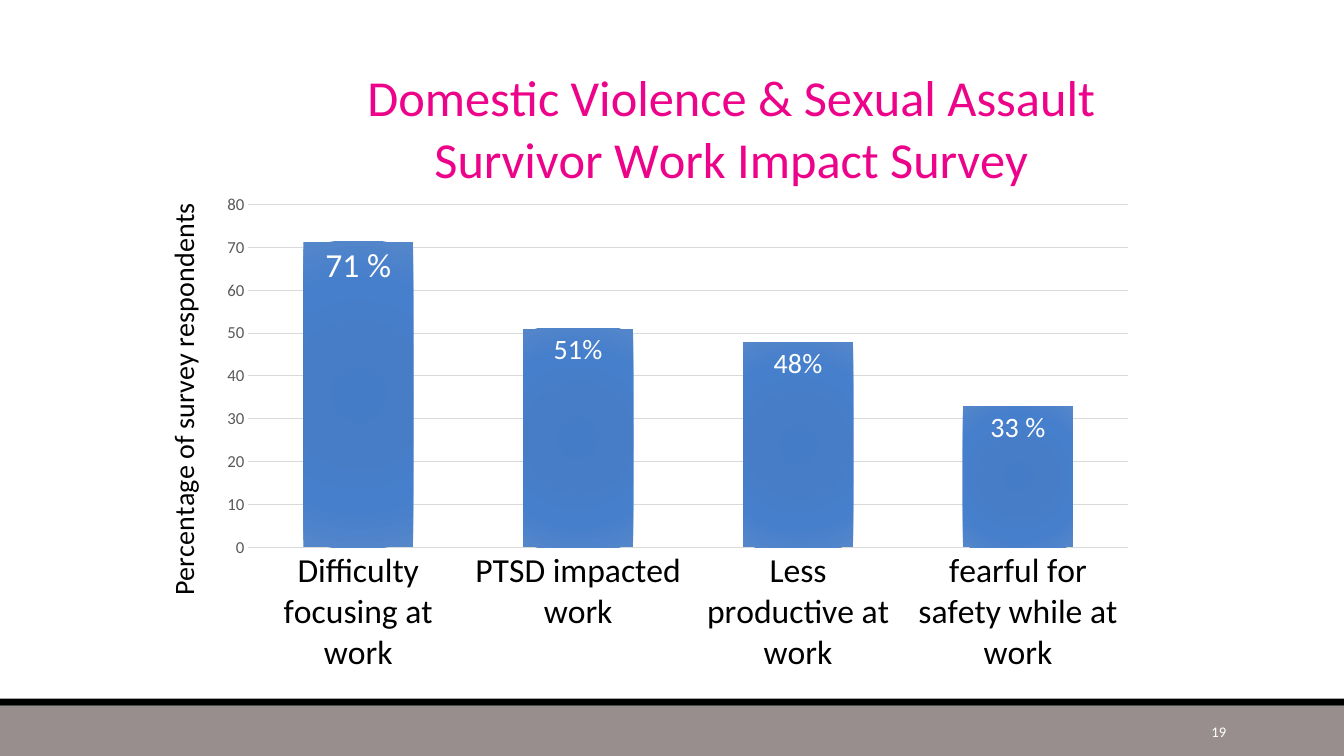
from pptx import Presentation
from pptx.chart.data import CategoryChartData
from pptx.dml.color import RGBColor
from pptx.enum.chart import XL_CHART_TYPE as ChartType
from pptx.enum.chart import XL_LABEL_POSITION as LabelPosition
from pptx.enum.chart import XL_TICK_MARK as TickMark
from pptx.enum.shapes import MSO_SHAPE as Shape
from pptx.enum.text import MSO_ANCHOR as Anchor
from pptx.enum.text import PP_ALIGN as Align
from pptx.oxml import parse_xml
from pptx.oxml.ns import nsdecls, qn
from pptx.util import Pt

FONT = "Calibri"
BLACK = RGBColor(0, 0, 0)
WHITE = RGBColor(0xFF, 0xFF, 0xFF)
PINK = RGBColor(0xED, 0x03, 0x8A)
TAUPE = RGBColor(0x99, 0x8E, 0x8E)
GRID = RGBColor(0xD9, 0xD9, 0xD9)
GREY = RGBColor(0x59, 0x59, 0x59)
LABEL_GREY = RGBColor(0x40, 0x40, 0x40)
BAR_STOPS = [
    (0, RGBColor(0x44, 0x7C, 0xC7)),
    (34, RGBColor(0x47, 0x7D, 0xC6)),
    (70, RGBColor(0x46, 0x7F, 0xCC)),
    (100, RGBColor(0x54, 0x86, 0xCA)),
]

TITLE = "Domestic Violence & Sexual Assault Survivor Work Impact Survey"
AXIS_TITLE = "Percentage of survey respondents"
PAGE_NUMBER = "19"
# category, value, label, label size
RESPONSES = [
    ("Difficulty focusing at work", 71.28, "71 %", 24),
    ("PTSD impacted work", 51.06, "51%", 20),
    ("Less productive at work", 47.87, "48%", 20),
    ("fearful for safety while at work", 32.98, "33 %", 20),
]

PAGE_WIDTH, PAGE_HEIGHT = 960, 540
# top, height, colour
FOOTER_BANDS = [(504, 36, TAUPE), (499, 5, BLACK)]
CHART_BOX = (106, 19, 714, 471)
NUMBER_BOX = (780, 508, 103, 29)
# fractions of the chart's width and height
TITLE_SPOT = {"x": 0.21, "y": 0.04}
AXIS_TITLE_SPOT = {"x": 0.01, "y": 0.26}
PLOT_SPOT = {"x": 0.1, "y": 0.27, "w": 0.88, "h": 0.52}


def style(font, size, color):
    font.name, font.size, font.bold = FONT, Pt(size), False
    font.color.rgb = color


def write(frame, text, size, color):
    frame.text = text
    style(frame.paragraphs[0].runs[0].font, size, color)


def set_layout(element, index, spot):
    """Fix a chart part's position, with its layout as child number index."""
    for old in element.findall(qn("c:layout")):
        element.remove(old)
    target = '<c:layoutTarget val="inner"/>' if "w" in spot else ""
    modes = "".join(f'<c:{key}Mode val="edge"/>' for key in "xy")
    values = "".join(f'<c:{key} val="{value}"/>' for key, value in spot.items())
    element.insert(index, parse_xml(
        f'<c:layout {nsdecls("c")}><c:manualLayout>{target}{modes}{values}'
        '</c:manualLayout></c:layout>'))


def fill_radial(series, stops):
    series.format.fill.solid()
    properties = series._element.find(qn("c:spPr"))
    stop_xml = "".join(
        f'<a:gs pos="{place * 1000}"><a:srgbClr val="{color}"/></a:gs>'
        for place, color in stops)
    properties.replace(properties.find(qn("a:solidFill")), parse_xml(
        f'<a:gradFill {nsdecls("a")}><a:gsLst>{stop_xml}</a:gsLst>'
        '<a:path path="circle"><a:fillToRect l="100000" t="100000" '
        'r="100000" b="100000"/></a:path></a:gradFill>'))


def add_footer(page):
    for top, height, color in FOOTER_BANDS:
        band = page.shapes.add_shape(
            Shape.RECTANGLE, 0, Pt(top), Pt(PAGE_WIDTH), Pt(height))
        band.shadow.inherit = False
        band.fill.solid()
        band.fill.fore_color.rgb = color
        band.line.fill.background()
    frame = page.shapes.add_textbox(*map(Pt, NUMBER_BOX)).text_frame
    frame.word_wrap = True
    frame.vertical_anchor = Anchor.MIDDLE
    write(frame, PAGE_NUMBER, 10.5, WHITE)
    frame.paragraphs[0].alignment = Align.RIGHT


def style_axes(chart):
    category, value = chart.category_axis, chart.value_axis
    for axis, size, color in ((category, 24, BLACK), (value, 12, GREY)):
        style(axis.tick_labels.font, size, color)
        axis.major_tick_mark = axis.minor_tick_mark = TickMark.NONE
    category.format.line.color.rgb = GRID
    category.format.line.width = Pt(1)
    value.format.line.fill.background()
    value.minimum_scale, value.maximum_scale, value.major_unit = 0, 80, 10
    value.major_gridlines.format.line.color.rgb = GRID
    value.major_gridlines.format.line.width = Pt(0.75)
    write(value.axis_title.text_frame, AXIS_TITLE, 20, BLACK)
    set_layout(value.axis_title._element, 1, AXIS_TITLE_SPOT)


def style_bars(plot):
    plot.gap_width, plot.overlap, plot.vary_by_categories = 100, -24, False
    series = plot.series[0]
    fill_radial(series, BAR_STOPS)
    labels = series.data_labels
    labels.show_value = True
    labels.position = LabelPosition.INSIDE_END
    style(labels.font, 12, LABEL_GREY)
    for index, (_, _, text, size) in enumerate(RESPONSES):
        label = series.points[index].data_label
        write(label.text_frame, text, size, WHITE)
        label.position = LabelPosition.INSIDE_END


def add_survey_chart(page):
    data = CategoryChartData()
    data.categories = [response[0] for response in RESPONSES]
    data.add_series("Series 1", [response[1] for response in RESPONSES])
    chart = page.shapes.add_chart(
        ChartType.COLUMN_CLUSTERED, *map(Pt, CHART_BOX), data).chart
    style(chart.font, 10, BLACK)
    chart.has_legend = False
    write(chart.chart_title.text_frame, TITLE, 36, PINK)
    set_layout(chart.chart_title._element, 1, TITLE_SPOT)
    set_layout(chart._chartSpace.chart.plotArea, 0, PLOT_SPOT)
    style_axes(chart)
    style_bars(chart.plots[0])


def main():
    deck = Presentation()
    deck.slide_width, deck.slide_height = Pt(PAGE_WIDTH), Pt(PAGE_HEIGHT)
    page = deck.slides.add_slide(deck.slide_layouts[6])
    add_footer(page)
    add_survey_chart(page)
    deck.save("out.pptx")


if __name__ == "__main__":
    main()
